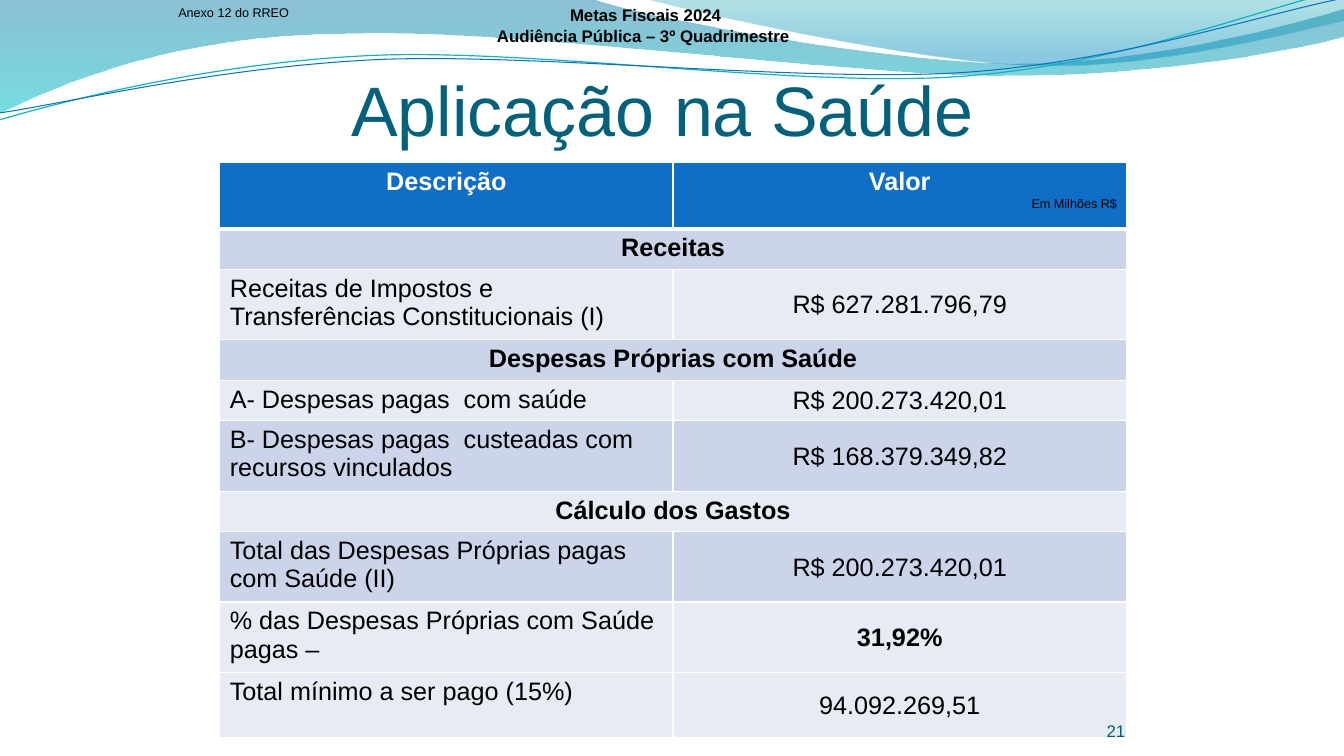
from lxml import etree
from pptx import Presentation
from pptx.dml.color import RGBColor
from pptx.enum.text import MSO_ANCHOR as Anchor, PP_ALIGN as Align
from pptx.oxml import parse_xml
from pptx.oxml.ns import nsdecls, qn
from pptx.util import Inches, Pt

WIDTH, HEIGHT = Inches(13.33), Inches(7.5)
CELL = Inches(1)  # waves use a grid of 13.33 columns by 7.5 rows
FONT = "Arial"
COLORS = {
    "black": "000000", "white": "FFFFFF", "title": "04617B", "page": "035C75",
    "header": "0F6FC6", "dark_band": "CCD4EA", "light_band": "E7EBF4",
    "deep_blue": "0074A0", "cyan": "00C4CD", "sky": "008ABF", "teal": "00A0A8",
    "teal_line": "09B7BF", "blue_line": "0F6FC6",
}
TALL, LOW, LAST = 8.8, 5.07, 8.53  # row heights, % of the slide's height
# One text is a section across both columns
ROWS = [
    (TALL, "header", ("Descrição", "Valor")),
    (LOW, "dark_band", ("Receitas",)),
    (TALL, "light_band", ("Receitas de Impostos e Transferências Constitucionais (I)",
                          "R$ 627.281.796,79")),
    (LOW, "dark_band", ("Despesas Próprias com Saúde",)),
    (LOW, "light_band", ("A- Despesas pagas  com saúde", "R$ 200.273.420,01")),
    (TALL, "dark_band", ("B- Despesas pagas  custeadas com recursos vinculados",
                         "R$ 168.379.349,82")),
    (LOW, "light_band", ("Cálculo dos Gastos",)),
    (TALL, "dark_band", ("Total das Despesas Próprias pagas com Saúde (II)",
                         "R$ 200.273.420,01")),
    (TALL, "light_band", ("% das Despesas Próprias com Saúde  pagas –", "31,92%")),
    (LAST, "light_band", ("Total mínimo a ser pago (15%)", "94.092.269,51")),
]
BOLD_VALUES = {"Valor", "31,92%"}

# Each wave: a start, then steps of one point (straight) or three (Bézier)
LEFT_WAVE = [
    [(0, 0)], [(5.87, -0.01)],
    [(6.34, 0.17), (8.85, 0.63), (10.11, 0.63)],
    [(11.37, 0.63), (12.78, 0.26), (13.33, 0.09)], [(13.35, 0.36)],
    [(13.11, 0.44), (11.6, 0.76), (9.94, 0.75)],
    [(8.29, 0.75), (5.09, 0.28), (3.43, 0.34)],
    [(1.72, 0.35), (0.61, 0.83), (-0.01, 1.13)], [(0, 0)],
]
RIGHT_WAVE = [
    [(6.39, -0.01)],
    [(6.79, 0.11), (9.09, 0.62), (10.25, 0.65)],
    [(11.41, 0.69), (12.82, 0.32), (13.33, 0.21)], [(13.33, 0)],
    [(6.39, -0.01)],
]
TEAL_WAVE = [
    [(-0.01, 1.19)],
    [(0.64, 1), (2.11, 0.62), (3.69, 0.55)],
    [(5.27, 0.48), (7.9, 0.87), (9.5, 0.76)],
    [(11.1, 0.65), (12.52, 0.08), (13.31, -0.1)],
]
BLUE_WAVE = [
    [(0, 1.12)],
    [(0.63, 1.03), (2.18, 0.66), (3.78, 0.59)],
    [(5.37, 0.53), (7.96, 0.82), (9.55, 0.72)],
    [(11.15, 0.61), (12.55, 0.13), (13.34, -0.02)],
]


def rgb(name):
    return RGBColor.from_string(COLORS[name])


def across(percent):
    return round(WIDTH * percent / 100)


def down(percent):
    return round(HEIGHT * percent / 100)


def add_wave(slide, wave, close):
    """Outline all points, then turn each step of three into one Bézier."""
    emu = [(round(x * CELL), round(y * CELL)) for step in wave for x, y in step]
    builder = slide.shapes.build_freeform(*emu[0], scale=1.0)
    builder.add_line_segments(emu[1:], close=close)
    s = builder.convert_to_shape()
    s.shadow.inherit = False
    lines = s._element.spPr.iter(qn("a:lnTo"))
    lines = iter(list(lines))
    for step in wave[1:]:
        segments = [next(lines) for _ in step]
        if len(step) == 3:
            curve = etree.Element(qn("a:cubicBezTo"))
            segments[0].addprevious(curve)
            for segment in segments:
                curve.append(segment[0])
                segment.getparent().remove(segment)
    return s


def add_filled_wave(slide, wave, stops, angle):
    """Stops are (position, colour, opacity %)."""
    s = add_wave(slide, wave, True)
    s.line.fill.background()
    s.fill.gradient()
    s.fill.gradient_angle = angle
    for stop, (position, color, _) in zip(s.fill.gradient_stops, stops):
        stop.position = position
        stop.color.rgb = rgb(color)
    clrs = s._element.spPr.iter(qn("a:srgbClr"))
    for clr, (_, _, opacity) in zip(clrs, stops):
        etree.SubElement(clr, qn("a:alpha")).set("val", str(opacity * 1000))


def add_line_wave(slide, wave, color, width):
    s = add_wave(slide, wave, False)
    s.fill.background()
    s.line.color.rgb = rgb(color)
    s.line.width = Pt(width)


def style(p, size, color, align, bold=False):
    p.alignment = align
    p.font.name, p.font.size, p.font.bold = FONT, Pt(size), bold
    p.font.color.rgb = rgb(color)


def add_text(slide, box, lines, size, color="black", align=Align.CENTER,
             anchor=Anchor.TOP, insets=(0.1, 0.05, 0.05), bold=False, wrap=True):
    """Box is in % of the slide; insets are side, top and bottom."""
    x, y, w, h = box
    sp = slide.shapes.add_textbox(across(x), down(y), across(w), down(h))
    tf = sp.text_frame
    tf.word_wrap = wrap
    tf.vertical_anchor = anchor
    side, top, bottom = map(Inches, insets)
    tf.margin_left = tf.margin_right = side
    tf.margin_top, tf.margin_bottom = top, bottom
    tf.text = "\n".join(lines)
    for p in tf.paragraphs:
        style(p, size, color, align, bold)


def set_borders(cell, top, bottom):
    tc_pr = cell._tc.get_or_add_tcPr()
    sides = (("lnL", 0.96), ("lnR", 0.96), ("lnT", top), ("lnB", bottom))
    for i, (side, width) in enumerate(sides):
        tc_pr.insert(i, parse_xml(
            f'<a:{side} {nsdecls("a")} w="{Pt(width)}"><a:solidFill>'
            f'<a:srgbClr val="{COLORS["white"]}"/></a:solidFill></a:{side}>'))


def add_health_table(slide):
    heights = [height for height, _, _ in ROWS]
    table = slide.shapes.add_table(
        len(ROWS), 2, across(16.35), down(21.47), across(67.46),
        down(sum(heights))).table
    for r, (height, band, texts) in enumerate(ROWS):
        table.rows[r].height = down(height)
        section, header = len(texts) == 1, r == 0
        for c in range(2):
            cell = table.cell(r, c)
            cell.fill.solid()
            cell.fill.fore_color.rgb = rgb(band)
            set_borders(cell, 3 if r == 1 else 0.96, 3 if header else 0.96)
        if section:
            table.cell(r, 0).merge(table.cell(r, 1))
        for c, text in enumerate(texts):
            cell = table.cell(r, c)
            cell.text = text
            if c == 1 and not header:
                cell.vertical_anchor = Anchor.MIDDLE
                cell.margin_left = cell.margin_right = cell.margin_top = Inches(0.01)
                cell.margin_bottom = 0
            centred = section or header or c == 1
            style(cell.text_frame.paragraphs[0], 18,
                  "white" if header else "black",
                  Align.CENTER if centred else Align.LEFT,
                  section or header or text in BOLD_VALUES)


def main():
    prs = Presentation()
    prs.slide_width, prs.slide_height = WIDTH, HEIGHT
    slide = prs.slides.add_slide(prs.slide_layouts[6])
    add_filled_wave(slide, LEFT_WAVE,
                    [(0, "deep_blue", 45), (1, "cyan", 55)], 270)
    add_filled_wave(slide, RIGHT_WAVE,
                    [(0.2, "sky", 45), (1, "teal", 30)], 90)
    add_line_wave(slide, TEAL_WAVE, "teal_line", 0.85)
    add_line_wave(slide, BLUE_WAVE, "blue_line", 0.75)
    add_text(slide, (16.28, 5.73, 67.52, 16.67), ["Aplicação na Saúde "], 50,
             "title", anchor=Anchor.MIDDLE, insets=(0, 0.05, 0))
    add_health_table(slide)
    add_text(slide, (77.49, 92.67, 6.23, 5.33), ["21"], 12, "page",
             Align.RIGHT, Anchor.BOTTOM, (0, 0, 0))
    add_text(slide, (75.99, 25.2, 7.88, 3.33), ["Em Milhões R$"], 9, wrap=False)
    add_text(slide, (12.53, 0, 10.2, 3.33), ["Anexo 12 do RREO"], 9,
             align=Align.LEFT)
    add_text(slide, (35.33, 0, 25.43, 6.67),
             ["Metas Fiscais 2024", "Audiência Pública – 3º Quadrimestre "], 12,
             anchor=Anchor.MIDDLE, bold=True)
    prs.save("out.pptx")


if __name__ == "__main__":
    main()
